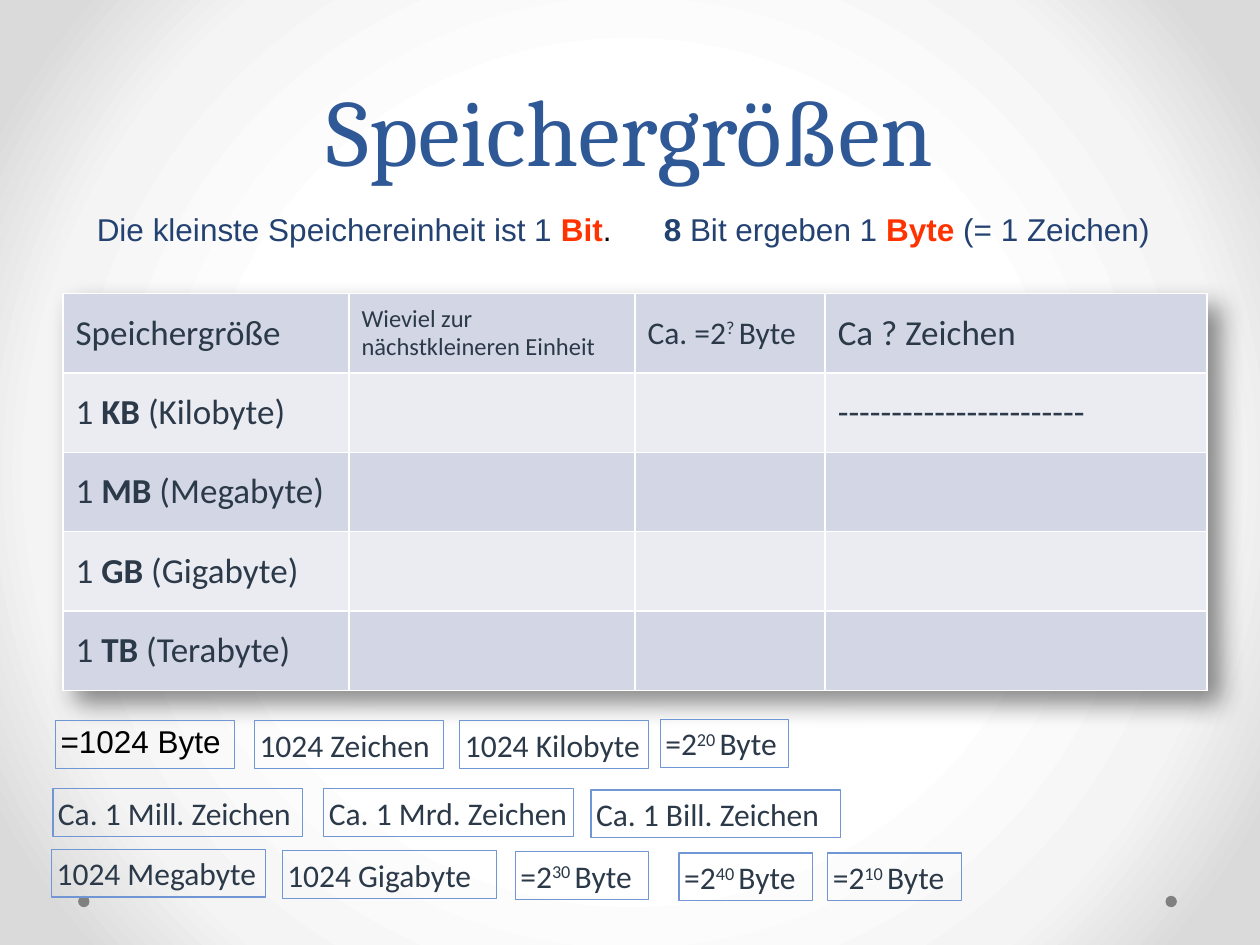
from pptx import Presentation
from pptx.dml.color import RGBColor
from pptx.enum.shapes import MSO_SHAPE
from pptx.enum.text import MSO_ANCHOR, MSO_AUTO_SIZE, PP_ALIGN
from pptx.oxml import parse_xml
from pptx.oxml.ns import nsdecls
from pptx.util import Inches, Pt
from lxml.etree import SubElement

COLORS = {
    "title": "2F5897", "intro": "234271", "accent": "FF3300", "text": "2B3949",
    "black": "000000", "white": "FFFFFF", "dot": "808080", "border": "7097D3",
    "band_dark": "D2D6E5", "band_light": "EAECF2",
}


def color(name):
    return RGBColor.from_string(COLORS[name])


def add_run(p, text, size, name="text", font="Calibri", bold=False, superscript=False):
    r = p.add_run()
    r.text = text
    r.font.size, r.font.name, r.font.bold = Pt(size), font, bold
    r.font.color.rgb = color(name)
    if superscript:
        r.font._element.set("baseline", "30000")


prs = Presentation()
prs.slide_width, prs.slide_height = Inches(10), Inches(7.5)
s = prs.slides.add_slide(prs.slide_layouts[5])

# Background: white centre fading to grey corners
stops = "".join(
    f'<a:gs pos="{pos}000"><a:srgbClr val="{value}"/></a:gs>'
    for pos, value in [(50, "FFFFFF"), (76, "F4F4F4"), (92, "DADADA")])
s.background.fill.solid()
bg_fill = s.background._cSld.bg.bgPr
bg_fill.replace(bg_fill[0], parse_xml(
    f'<a:gradFill {nsdecls("a")} rotWithShape="1"><a:gsLst>{stops}</a:gsLst>'
    '<a:path path="circle"><a:fillToRect l="50000" t="50000" r="50000" b="50000"/></a:path>'
    '</a:gradFill>'))

for x in (9.25, 0.62):
    dot = s.shapes.add_shape(MSO_SHAPE.OVAL, Inches(x), Inches(7.11), Inches(0.09), Inches(0.09))
    dot.shadow.inherit = False
    dot.fill.solid()
    dot.fill.fore_color.rgb = color("dot")
    dot.line.fill.background()

# Title
title = s.shapes.title
title.left, title.top, title.width, title.height = Inches(0.5), Inches(0.13), Inches(9), Inches(1.39)
tf = title.text_frame
tf.vertical_anchor = MSO_ANCHOR.BOTTOM
p = tf.paragraphs[0]
p.alignment = PP_ALIGN.CENTER
p.line_spacing = Pt(58)
add_run(p, "Speichergrößen", 54, "title", "Cambria")

# Table
units = [("KB", "Kilobyte"), ("MB", "Megabyte"), ("GB", "Gigabyte"), ("TB", "Terabyte")]
rows = [[
    [("Speichergröße", 20)],
    [("Wieviel zur nächstkleineren Einheit", 14)],
    [("Ca. =2", 18), ("? ", 18, "super"), ("Byte", 18)],
    [("Ca ? Zeichen", 20)],
]]
for short, full in units:
    rows.append([[("1 ", 20), (short, 20, "bold"), (f" ({full})", 20)], [], [], []])
rows[1][3] = [("-" * 23, 20)]

table = s.shapes.add_table(5, 4, Inches(0.5), Inches(2.33), Inches(9.07), Inches(3.15)).table
table.first_row = table.horz_banding = False
table._tbl.tblPr.insert(0, parse_xml(
    f'<a:effectLst {nsdecls("a")}><a:outerShdw blurRad="190500" dist="130000" dir="2700000" '
    'algn="tl" rotWithShape="0"><a:srgbClr val="000000"><a:alpha val="45000"/></a:srgbClr>'
    '</a:outerShdw></a:effectLst>'))
for column, width in zip(table.columns, (2.27, 2.27, 1.51, 3.03)):
    column.width = Inches(width)
for i, row in enumerate(rows):
    table.rows[i].height = Inches(0.63)
    for j, runs in enumerate(row):
        cell = table.cell(i, j)
        cell.vertical_anchor = MSO_ANCHOR.MIDDLE
        tcPr = cell._tc.get_or_add_tcPr()
        for side in ("lnL", "lnR", "lnT", "lnB"):
            tcPr.append(parse_xml(
                f'<a:{side} {nsdecls("a")} w="12700"><a:solidFill>'
                f'<a:srgbClr val="{COLORS["white"]}"/></a:solidFill></a:{side}>'))
        cell.fill.solid()
        cell.fill.fore_color.rgb = color("band_light" if i % 2 else "band_dark")
        p = cell.text_frame.paragraphs[0]
        p.line_spacing = 0.93
        for text, size, *style in runs:
            add_run(p, text, size, bold="bold" in style, superscript="super" in style)

# Introductory sentences, the second one starting at a tab stop
intro = s.shapes.add_textbox(Inches(0.67), Inches(1.62), Inches(8.66), Inches(0.4))
tf = intro.text_frame
tf.word_wrap = True
tf.auto_size = MSO_AUTO_SIZE.SHAPE_TO_FIT_TEXT
p = tf.paragraphs[0]
p.space_before = Pt(15)
tabs = SubElement(p._p.get_or_add_pPr(), "{http://schemas.openxmlformats.org/drawingml/2006/main}tabLst")
SubElement(tabs, tabs.tag.replace("tabLst", "tab"), pos=str(Inches(4.5)), algn="l")
for text, name, bold in [
    ("Die kleinste Speichereinheit ist 1 ", "intro", False),
    ("Bit", "accent", True),
    (".\t", "black", False),
    ("8", "intro", True),
    (" Bit ergeben 1 ", "intro", False),
    ("Byte ", "accent", True),
    ("(= 1 Zeichen)", "intro", False),
]:
    add_run(p, text, 18, name, "Arial", bold)

# Answer cards: left, top, width, text or exponent of two
cards = [
    (0.44, 5.72, 1.42, "=1024 Byte"), (2.02, 5.72, 1.5, "1024 Zeichen"),
    (3.65, 5.72, 1.5, "1024 Kilobyte"), (5.24, 5.71, 1.02, 20),
    (0.42, 6.26, 1.98, "Ca. 1 Mill. Zeichen"), (2.57, 6.26, 1.98, "Ca. 1 Mrd. Zeichen"),
    (4.69, 6.27, 1.98, "Ca. 1 Bill. Zeichen"),
    (0.41, 6.74, 1.7, "1024 Megabyte"), (2.24, 6.75, 1.7, "1024 Gigabyte"),
    (4.09, 6.76, 1.06, 30), (5.39, 6.77, 1.06, 40), (6.57, 6.77, 1.06, 10),
]
for x, y, width, content in cards:
    card = s.shapes.add_shape(MSO_SHAPE.RECTANGLE, Inches(x), Inches(y), Inches(width), Inches(0.38))
    card.shadow.inherit = False
    card.fill.background()
    card.line.color.rgb = color("border")
    card.line.width = Pt(0.75)
    tf = card.text_frame
    tf.word_wrap = True
    tf.auto_size = MSO_AUTO_SIZE.SHAPE_TO_FIT_TEXT
    tf.vertical_anchor = MSO_ANCHOR.TOP
    tf.margin_left = tf.margin_top = tf.margin_bottom = Inches(0.04)
    tf.margin_right = 0
    p = tf.paragraphs[0]
    p.alignment = PP_ALIGN.LEFT
    if isinstance(content, int):
        add_run(p, "=2", 18)
        add_run(p, f"{content} ", 18, superscript=True)
        add_run(p, "Byte", 18)
    elif content == "=1024 Byte":
        p.line_spacing = 0.93
        add_run(p, content, 18, "black", "Arial")
    else:
        add_run(p, content, 18)

prs.save("out.pptx")
